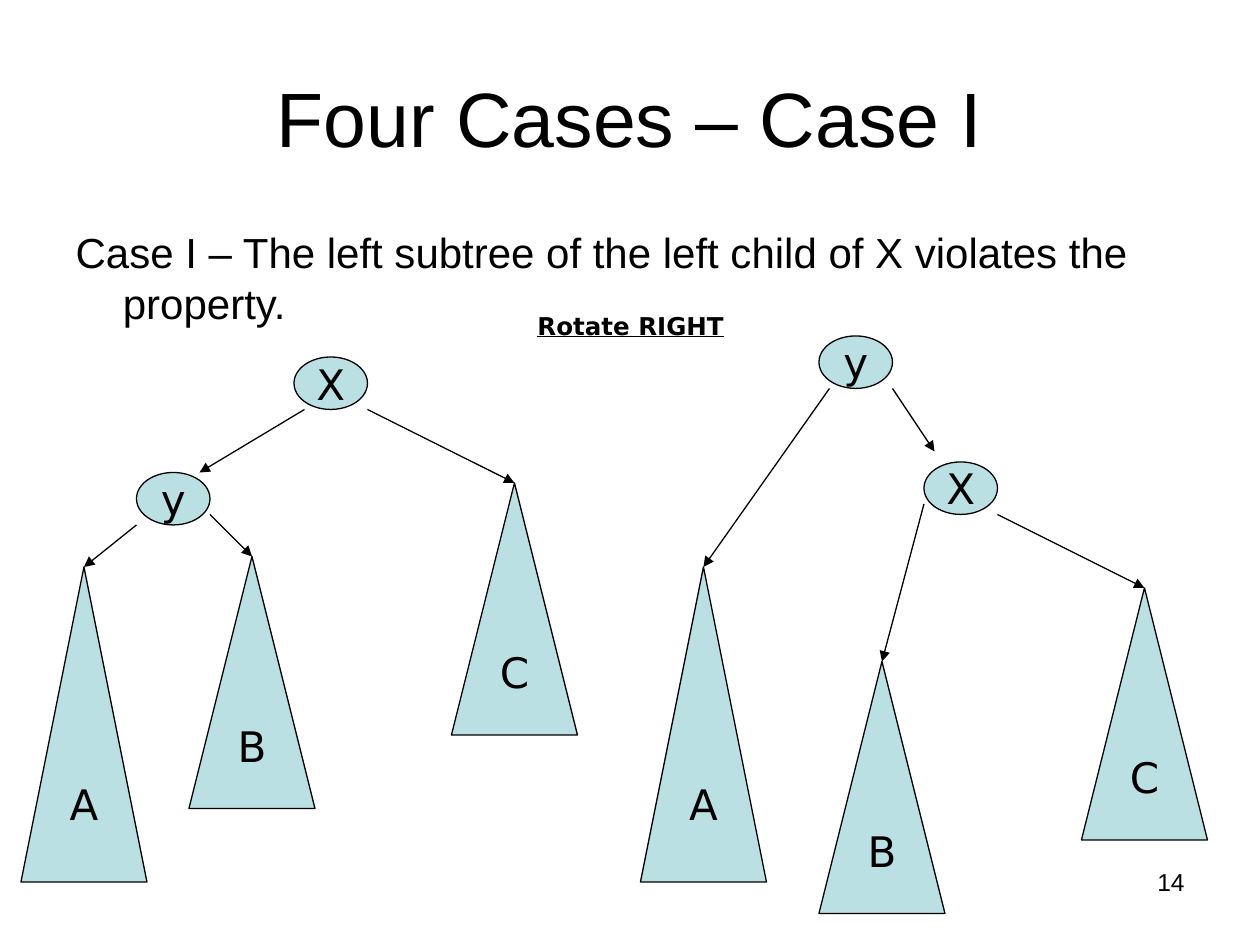
from pptx import Presentation
from pptx.dml.color import RGBColor
from pptx.enum.shapes import MSO_CONNECTOR, MSO_SHAPE
from pptx.enum.text import MSO_ANCHOR, MSO_AUTO_SIZE, PP_ALIGN
from pptx.oxml.ns import qn
from pptx.util import Pt
from lxml.etree import SubElement

PX = 7620  # EMU per px, 120 px to the inch
BLACK = RGBColor(0x00, 0x00, 0x00)
TEAL = RGBColor(0xBB, 0xE0, 0xE3)
SANS, MONO = "Arial", "DejaVu Sans"
NODE_W, NODE_H = 70, 50
TREE_W = 120
APEX = (TREE_W // 2, 0)

# Nodes: name -> (x, y); subtrees: name -> (x, y, height);
# edges: (parent, start offset, child, end offset)
BEFORE = dict(
    nodes={"X": (260, 0), "y": (110, 110)},
    trees={"A": (0, 200, 300), "B": (160, 190, 240), "C": (410, 120, 240)},
    edges=[("X", (10, 50), "y", APEX), ("X", (70, 50), "C", APEX),
           ("y", (0, 50), "A", APEX), ("y", (70, 40), "B", APEX)],
)
AFTER = dict(
    nodes={"y": (170, 0), "X": (270, 120)},
    trees={"A": (0, 220, 300), "B": (170, 310, 240), "C": (420, 240, 240)},
    edges=[("y", (10, 50), "A", APEX), ("y", (70, 50), "X", (10, -10)),
           ("X", (0, 40), "B", APEX), ("X", (70, 50), "C", APEX)],
)


def emu(*nums):
    return [n * PX for n in nums]


def write(frame, text, size, face, align=PP_ALIGN.LEFT):
    """Add one styled run to the first paragraph and return the run."""
    para = frame.paragraphs[0]
    para.alignment = align
    run = para.add_run()
    run.text = text
    font = run.font
    font.size, font.name = Pt(size), face
    font.color.rgb = BLACK
    return run


def place(shape, box):
    shape.left, shape.top, shape.width, shape.height = emu(*box)


def title(slide, box, text):
    shape = slide.shapes.title
    place(shape, box)
    shape.text_frame.vertical_anchor = MSO_ANCHOR.MIDDLE
    write(shape.text_frame, text, 44, SANS, PP_ALIGN.CENTER)


def body(slide, box, text):
    shape = slide.placeholders[1]
    place(shape, box)
    frame = shape.text_frame
    frame.auto_size = MSO_AUTO_SIZE.NONE
    write(frame, text, 24, SANS)
    props = frame.paragraphs[0]._p.get_or_add_pPr()
    hang = 45 * PX
    props.set("marL", str(hang))
    props.set("indent", str(-hang))
    SubElement(props, qn("a:buNone"))


def label(slide, box, text, face, align=PP_ALIGN.LEFT):
    frame = slide.shapes.add_textbox(*emu(*box)).text_frame
    frame.word_wrap = True
    return write(frame, text, 14, face, align)


def block(slide, kind, box, text):
    """Draw one filled and lettered part of a tree."""
    shape = slide.shapes.add_shape(kind, *emu(*box))
    shape.shadow.inherit = False
    shape.fill.solid()
    shape.fill.fore_color.rgb = TEAL
    shape.line.color.rgb = BLACK
    shape.line.width = Pt(0.75)
    frame = shape.text_frame
    frame.word_wrap = False
    frame.vertical_anchor = MSO_ANCHOR.MIDDLE
    write(frame, text, 24, MONO, PP_ALIGN.CENTER)


def arrow(slide, start, end):
    link = slide.shapes.add_connector(
        MSO_CONNECTOR.STRAIGHT, *emu(*start), *emu(*end))
    link.line.color.rgb = BLACK
    link.line.width = Pt(0.75)
    SubElement(link.line._get_or_add_ln(), qn("a:tailEnd"), type="triangle")
    SubElement(link._element.spPr, qn("a:effectLst"))


def tree(slide, left, top, nodes, trees, edges):
    spots = {}
    for name, (x, y) in nodes.items():
        spots[name] = left + x, top + y
        block(slide, MSO_SHAPE.OVAL, (*spots[name], NODE_W, NODE_H), name)
    for name, (x, y, high) in trees.items():
        spots[name] = left + x, top + y
        block(slide, MSO_SHAPE.FLOWCHART_EXTRACT,
              (*spots[name], TREE_W, high), name)
    for head, start, child, end in edges:
        (hx, hy), (cx, cy) = spots[head], spots[child]
        arrow(slide, (hx + start[0], hy + start[1]),
              (cx + end[0], cy + end[1]))


def main():
    deck = Presentation()
    deck.slide_width, deck.slide_height = emu(1200, 900)
    slide = deck.slides.add_slide(deck.slide_layouts[1])
    title(slide, (60, 36, 1080, 150), "Four Cases – Case I")
    body(slide, (60, 210, 1080, 594),
         "Case I – The left subtree of the left child of X "
         "violates the property.")
    tree(slide, 20, 340, **BEFORE)
    tree(slide, 610, 320, **AFTER)
    turn = label(slide, (500, 290, 220, 112), "Rotate RIGHT", MONO)
    turn.font.bold = turn.font.underline = True
    label(slide, (860, 820, 280, 62), "14", SANS, PP_ALIGN.RIGHT)
    deck.save("out.pptx")


if __name__ == "__main__":
    main()
